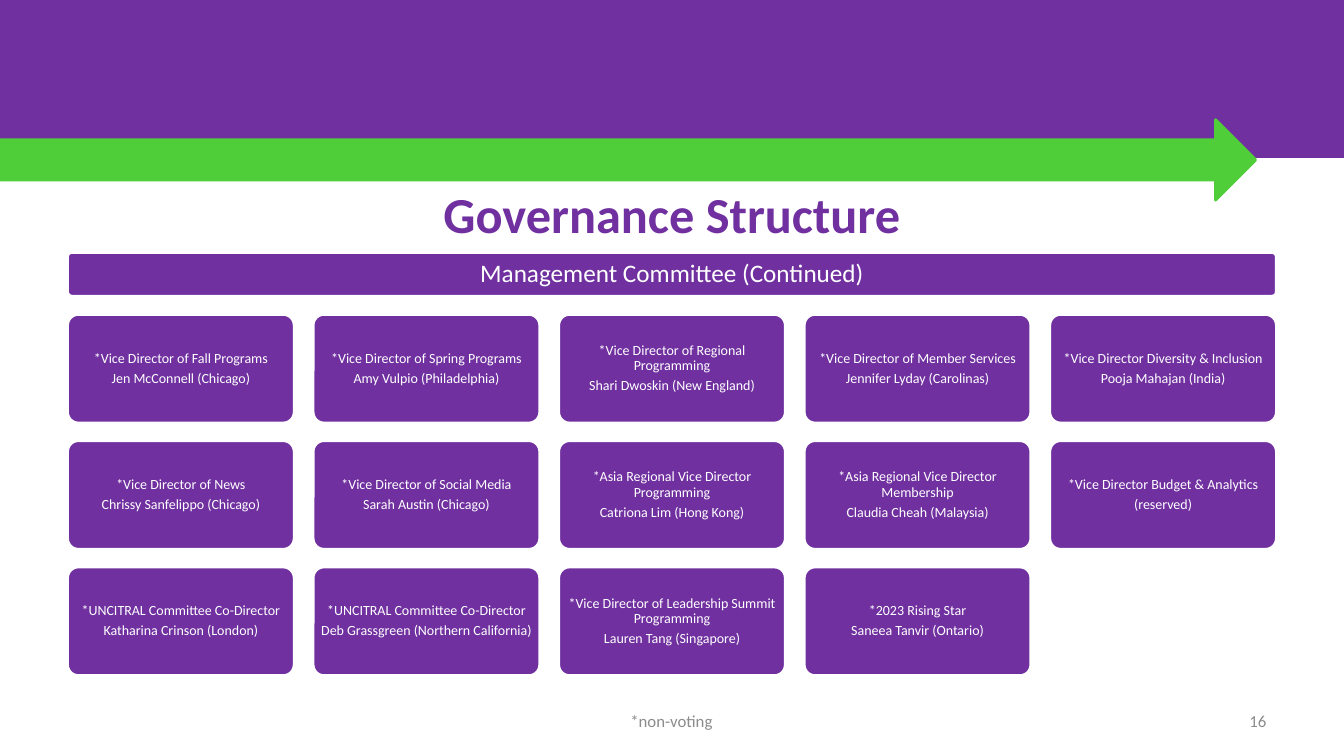
from pptx import Presentation
from pptx.dml.color import RGBColor
from pptx.enum.shapes import MSO_SHAPE as SHAPE
from pptx.enum.text import MSO_ANCHOR as ANCHOR, PP_ALIGN as ALIGN
from pptx.util import Pt

PURPLE, GREEN, WHITE, GREY = "7030A0", "4FCE3A", "FFFFFF", "8C8C8C"
FONT = "Calibri"
LEFT, WIDTH = 48.25, 863.5

# Each row of the grid: (role, holder)
COMMITTEE = [
    [("*Vice Director of Fall Programs", "Jen McConnell (Chicago)"),
     ("*Vice Director of Spring Programs", "Amy Vulpio (Philadelphia)"),
     ("*Vice Director of Regional Programming", "Shari Dwoskin (New England)"),
     ("*Vice Director of Member Services", "Jennifer Lyday (Carolinas)"),
     ("*Vice Director Diversity & Inclusion", "Pooja Mahajan (India)")],
    [("*Vice Director of News", "Chrissy Sanfelippo (Chicago)"),
     ("*Vice Director of Social Media", "Sarah Austin (Chicago)"),
     ("*Asia Regional Vice Director Programming", "Catriona Lim (Hong Kong)"),
     ("*Asia Regional Vice Director Membership", "Claudia Cheah (Malaysia)"),
     ("*Vice Director Budget & Analytics", "(reserved)")],
    [("*UNCITRAL Committee Co-Director", "Katharina Crinson (London)"),
     ("*UNCITRAL Committee Co-Director", "Deb Grassgreen (Northern California)"),
     ("*Vice Director of Leadership Summit Programming", "Lauren Tang (Singapore)"),
     ("*2023 Rising Star", "Saneea Tanvir (Ontario)")],
]


def color(hex_string):
    return RGBColor.from_string(hex_string)


def add_block(s, kind, box, fill, line):
    sp = s.shapes.add_shape(kind, *map(Pt, box))
    sp.shadow.inherit = False
    sp.fill.solid()
    sp.fill.fore_color.rgb = color(fill)
    sp.line.color.rgb = color(line)
    sp.line.width = Pt(2)
    return sp


def write(tf, lines, size, hex_string, align=ALIGN.CENTER, bold=False):
    tf.word_wrap = True
    tf.vertical_anchor = ANCHOR.MIDDLE
    for i, line in enumerate(lines):
        p = tf.paragraphs[0] if i == 0 else tf.add_paragraph()
        p.alignment = align
        r = p.add_run()
        r.text = line
        r.font.name = FONT
        r.font.size = Pt(size)
        r.font.bold = bold
        r.font.color.rgb = color(hex_string)


def add_label(s, box, text, size, hex_string, **style):
    tf = s.shapes.add_textbox(*map(Pt, box)).text_frame
    write(tf, [text], size, hex_string, **style)


def add_card(s, box, lines, size, inset):
    sp = add_block(s, SHAPE.ROUNDED_RECTANGLE, box, PURPLE, WHITE)
    sp.adjustments[0] = 0.1
    tf = sp.text_frame
    tf.margin_left = tf.margin_right = Pt(inset)
    tf.margin_top = tf.margin_bottom = Pt(inset)
    write(tf, lines, size, WHITE)
    for p in tf.paragraphs:
        p.line_spacing = 0.9
        p.space_after = Pt(0.35 * size)


def add_grid(s, top, card_w, card_h, row_step):
    col_step = (WIDTH - card_w) / (len(COMMITTEE[0]) - 1)
    for row, cards in enumerate(COMMITTEE):
        for col, lines in enumerate(cards):
            box = (LEFT + col * col_step, top + row * row_step, card_w, card_h)
            add_card(s, box, lines, 10, 3)


def main():
    prs = Presentation()
    prs.slide_width, prs.slide_height = Pt(960), Pt(540)
    s = prs.slides.add_slide(prs.slide_layouts[6])

    # Header band and arrow
    add_block(s, SHAPE.RECTANGLE, (0, 0.7, 960, 111), PURPLE, PURPLE)
    add_block(s, SHAPE.RIGHT_ARROW, (0, 85.5, 897, 57.5), GREEN, GREEN)

    # Title and committee heading
    add_label(s, (48, 132, 864, 41.5), "Governance Structure", 36, PURPLE, bold=True)
    add_card(s, (LEFT, 180.3, WIDTH, 31.3), ["Management Committee (Continued)"], 18, 5)

    # Committee members
    add_grid(s, top=224.6, card_w=161.9, card_h=77.6, row_step=90.2)

    # Footer
    add_label(s, (687.6, 500.5, 224, 28.75), "16", 12, GREY, align=ALIGN.RIGHT)
    add_label(s, (327.6, 500.5, 304, 28.75), "*non-voting", 12, GREY)

    prs.save("out.pptx")


if __name__ == "__main__":
    main()
